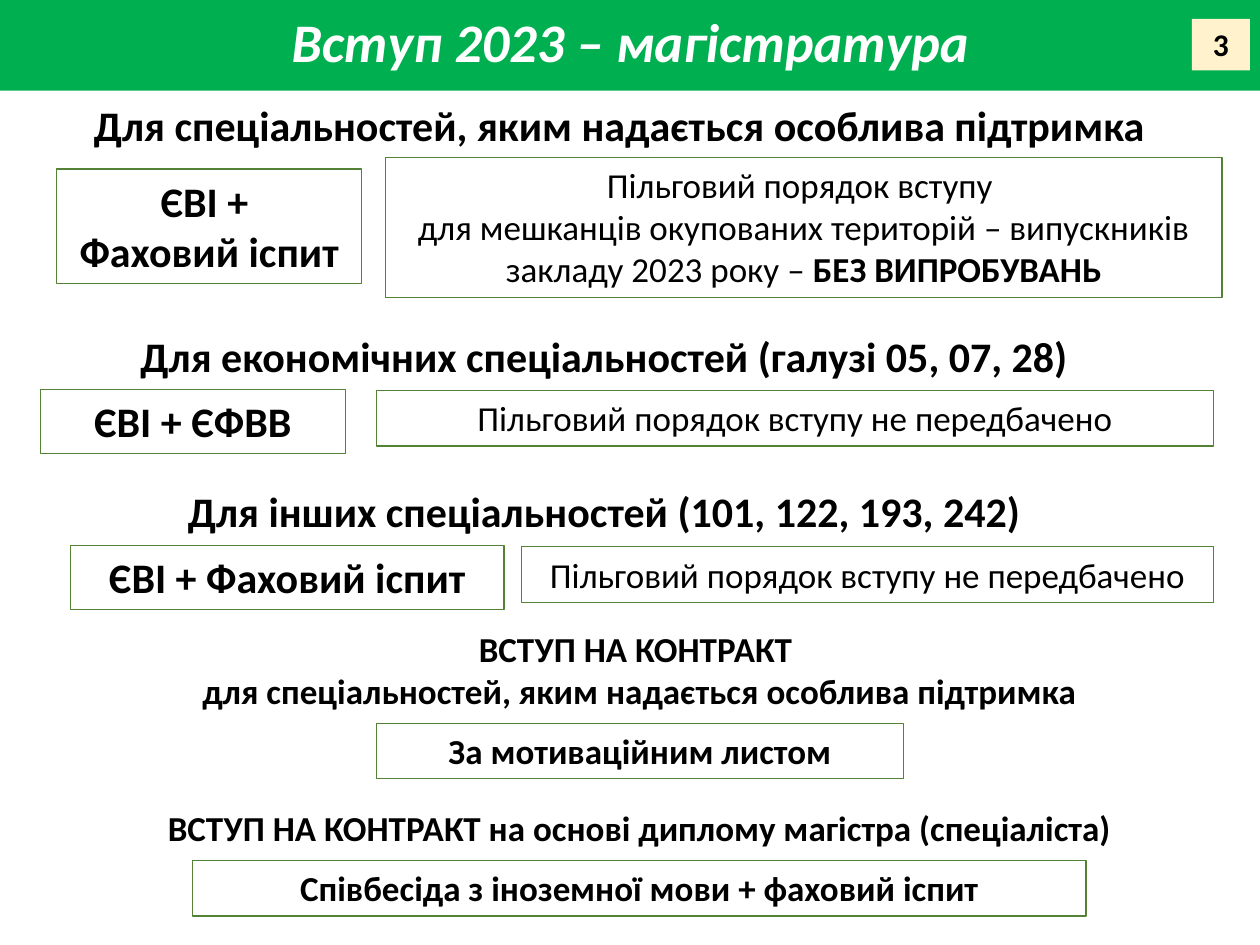
import pptx
import pptx.util
import pptx.dml.color
import pptx.enum.text

Inches = pptx.util.Inches
GREEN = pptx.dml.color.RGBColor(0x00, 0xB0, 0x50)
BORDER = pptx.dml.color.RGBColor(0x54, 0x82, 0x35)
CREAM = pptx.dml.color.RGBColor(0xFF, 0xF2, 0xCC)
BLACK = pptx.dml.color.RGBColor(0x00, 0x00, 0x00)
WHITE = pptx.dml.color.RGBColor(0xFF, 0xFF, 0xFF)
FONT = "Calibri"
LARGE, SMALL = 24, 20
HEADING_WIDTH = 8.71

TITLE = "Вступ 2023 – магістратура"
PAGE_NUMBER = "3"
NO_PRIVILEGE = "Пільговий порядок вступу не передбачено"

HEADINGS = [
    (0.56, 0.74, LARGE, ["Для спеціальностей, яким надається особлива підтримка"]),
    (0.44, 2.57, LARGE, ["Для економічних спеціальностей (галузі 05, 07, 28)"]),
    (0.44, 3.8, LARGE, ["Для інших спеціальностей (101, 122, 193, 242)"]),
    (0.72, 4.93, SMALL, ["ВСТУП НА КОНТРАКТ ",
                         "для спеціальностей, яким надається особлива підтримка"]),
    (0.72, 6.35, SMALL, ["ВСТУП НА КОНТРАКТ на основі диплому магістра (спеціаліста)"]),
]
EXAMS = [
    (0.45, 1.34, 2.42, LARGE, ["ЄВІ + ", "Фаховий іспит"]),
    (0.32, 3.09, 2.42, LARGE, ["ЄВІ + ЄФВВ"]),
    (0.56, 4.33, 3.44, LARGE, ["ЄВІ + Фаховий іспит"]),
    (2.99, 5.74, 4.18, SMALL, ["За мотиваційним листом"]),
    (1.53, 6.83, 7.09, SMALL, ["Співбесіда з іноземної мови + фаховий іспит"]),
]
PRIVILEGES = [
    (3.06, 1.25, 6.64, ["Пільговий порядок вступу ",
                        "для мешканців окупованих територій – випускників закладу 2023 року – "],
     "БЕЗ ВИПРОБУВАНЬ"),
    (2.99, 3.1, 6.64, [NO_PRIVILEGE], ""),
    (4.14, 4.34, 5.49, [NO_PRIVILEGE], ""),
]


def write_text(shape, lines, size=SMALL, bold=True, italic=False, color=BLACK,
               bold_ending="", spacing=1.0):
    frame = shape.text_frame
    frame.word_wrap = True
    for index, line in enumerate(lines):
        paragraph = frame.add_paragraph() if index else frame.paragraphs[0]
        paragraph.alignment = pptx.enum.text.PP_ALIGN.CENTER
        paragraph.line_spacing = spacing
        parts = [(line, bold)]
        if bold_ending and index == len(lines) - 1:
            parts.append((bold_ending, True))
        for text, is_bold in parts:
            run = paragraph.add_run()
            run.text = text
            run.font.name = FONT
            run.font.size = pptx.util.Pt(size)
            run.font.bold = is_bold
            run.font.italic = italic
            run.font.color.rgb = color


def add_box(slide, left, top, width, lines, fill=None, border=None, **text_format):
    size = text_format.get("size", SMALL)
    height = round(0.1 + len(lines) * size * 1.22 / 72, 2)
    if text_format.get("bold_ending"):
        height = 1.11
    shape = slide.shapes.add_textbox(Inches(left), Inches(top), Inches(width), Inches(height))
    if fill is not None:
        shape.fill.solid()
        shape.fill.fore_color.rgb = fill
    if border is not None:
        shape.line.color.rgb = border
        shape.line.width = pptx.util.Pt(0.75)
    write_text(shape, lines, **text_format)
    shape.text_frame.auto_size = pptx.enum.text.MSO_AUTO_SIZE.SHAPE_TO_FIT_TEXT


def add_title(slide):
    title = slide.shapes.title
    title.left, title.top = Inches(0), Inches(-0.01)
    title.width, title.height = Inches(10), Inches(0.73)
    title.fill.solid()
    title.fill.fore_color.rgb = GREEN
    title.text_frame.vertical_anchor = pptx.enum.text.MSO_ANCHOR.MIDDLE
    title.text_frame.auto_size = pptx.enum.text.MSO_AUTO_SIZE.NONE
    write_text(title, [TITLE], size=31, italic=True, color=WHITE, spacing=0.9)


def main():
    presentation = pptx.Presentation()
    presentation.slide_width, presentation.slide_height = Inches(10), Inches(7.5)
    slide = presentation.slides.add_slide(presentation.slide_layouts[5])
    add_title(slide)
    add_box(slide, 9.46, 0.15, 0.46, [PAGE_NUMBER], fill=CREAM, size=18)
    for left, top, size, lines in HEADINGS:
        add_box(slide, left, top, HEADING_WIDTH, lines, size=size)
    for left, top, width, size, lines in EXAMS:
        add_box(slide, left, top, width, lines, border=BORDER, size=size)
    for left, top, width, lines, ending in PRIVILEGES:
        add_box(slide, left, top, width, lines, border=BORDER, bold=False, bold_ending=ending)
    presentation.save("out.pptx")


if __name__ == "__main__":
    main()
